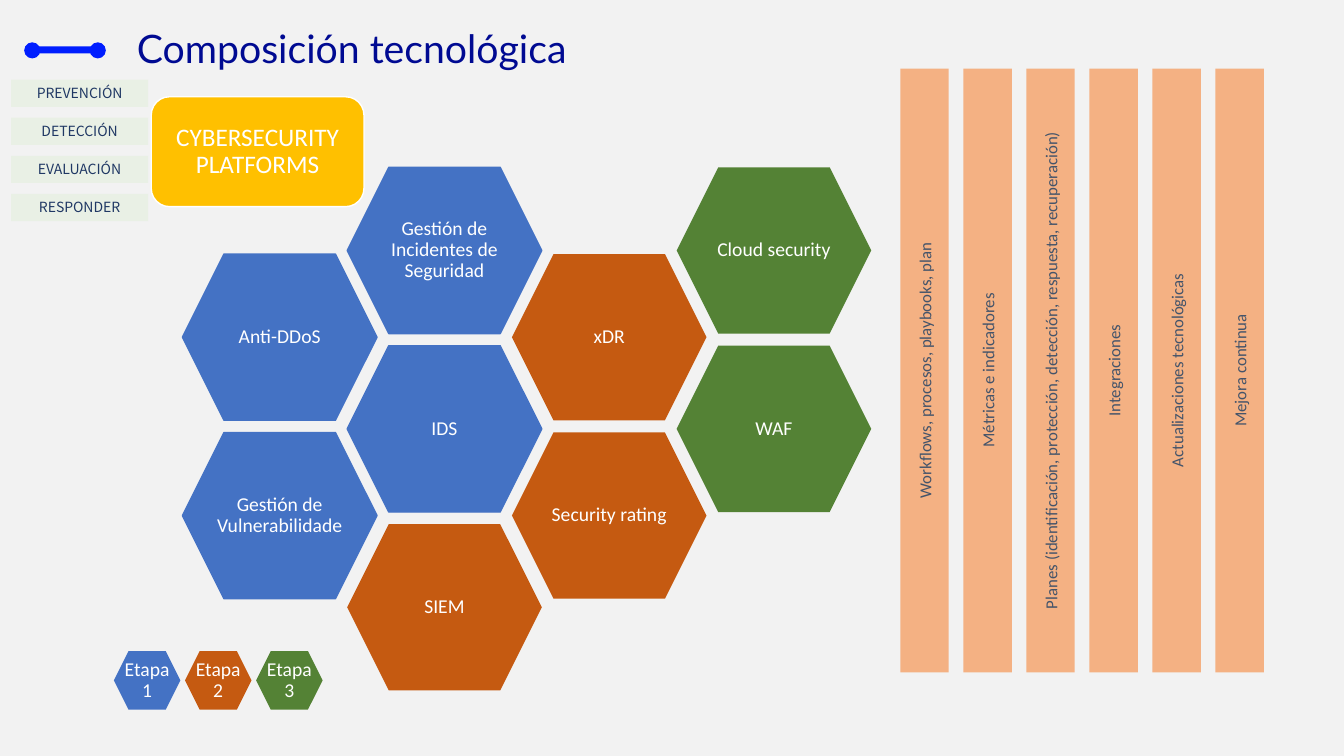
import pptx
import pptx.util
import pptx.dml.color
import pptx.enum.shapes
import pptx.enum.text
import pptx.oxml
import pptx.oxml.ns

Inches = pptx.util.Inches
SHAPES = pptx.enum.shapes.MSO_SHAPE
ALIGN = pptx.enum.text.PP_ALIGN
ANCHOR = pptx.enum.text.MSO_ANCHOR

TITLE = "Composición tecnológica"
PLATFORMS = "CYBERSECURITY PLATFORMS"
FUNCTIONS = ["PREVENCIÓN", "DETECCIÓN", "EVALUACIÓN", "RESPONDER"]
STAGES = ["Etapa 1", "Etapa 2", "Etapa 3"]
# Honeycomb cells: label, stage index, column, row
CELLS = [
    ("Anti-DDoS", 0, 0, 0),
    ("Gestión de Vulnerabilidade", 0, 0, 1),
    ("Gestión de Incidentes de Seguridad", 0, 1, 0),
    ("IDS", 0, 1, 1),
    ("SIEM", 1, 1, 2),
    ("xDR", 1, 2, 0),
    ("Security rating", 1, 2, 1),
    ("Cloud security", 2, 3, 0),
    ("WAF", 2, 3, 1),
]
PILLARS = [
    "Workflows, procesos, playbooks, plan",
    "Métricas e indicadores",
    "Planes (identificación, protección, detección, respuesta, recuperación)",
    "Integraciones",
    "Actualizaciones tecnológicas",
    "Mejora continua",
]


class Theme:
    background = "F2F2F2"
    accent = "001EFF"
    title = "000A92"
    platform = "FFC000"
    function = "E2F0D9"
    function_text = "203864"
    stages = ["4472C4", "C55A11", "548235"]
    pillar = "F4B183"
    pillar_text = "44546A"
    white = "FFFFFF"
    title_font, body_font, function_font = "Lato", "Calibri", "Noto Sans CJK JP"
    title_size, platform_size, cell_size, pillar_size, function_size = 28, 18, 14, 12, 10


def rgb(value):
    return pptx.dml.color.RGBColor.from_string(value)


def add_block(page, kind, left, top, width, height, fill, line=None):
    block = page.shapes.add_shape(
        kind, Inches(left), Inches(top), Inches(width), Inches(height))
    block.shadow.inherit = False
    block.fill.solid()
    block.fill.fore_color.rgb = rgb(fill)
    if line:
        block.line.color.rgb = rgb(line)
        block.line.width = pptx.util.Pt(1)
    else:
        block.line.fill.background()
    return block


def write(box, text, size, color, font=Theme.body_font, align=ALIGN.CENTER,
          anchor=ANCHOR.MIDDLE, spacing=None, insets=None):
    """Fill a box with one paragraph; insets are (horizontal, vertical) inches."""
    frame = box.text_frame
    frame.word_wrap = True
    frame.vertical_anchor = anchor
    if insets:
        frame.margin_left = frame.margin_right = Inches(insets[0])
        frame.margin_top = frame.margin_bottom = Inches(insets[1])
    para = frame.paragraphs[0]
    para.alignment = align
    if spacing:
        para.line_spacing = spacing
    span = para.add_run()
    span.text = text
    span.font.name = font
    span.font.size = pptx.util.Pt(size)
    span.font.color.rgb = rgb(color)


def add_hexagon(page, left, top, width, height, text, fill, line=None):
    hexagon = add_block(page, SHAPES.HEXAGON, left, top, width, height, fill, line)
    hexagon.adjustments[0] = 0.25
    write(hexagon, text, Theme.cell_size, Theme.white, spacing=0.9, insets=(0, 0.02))


def add_heading(page):
    for left in (0.24, 0.89):
        add_block(page, SHAPES.OVAL, left, 0.42, 0.16, 0.16, Theme.accent)
    add_block(page, SHAPES.RECTANGLE, 0.32, 0.46, 0.66, 0.07, Theme.accent)
    box = page.shapes.add_textbox(Inches(1.26), Inches(0.24), Inches(9.01), Inches(0.52))
    write(box, TITLE, Theme.title_size, Theme.title, Theme.title_font,
          ALIGN.LEFT, ANCHOR.BOTTOM, 0.9)


def add_functions(page):
    for index, label in enumerate(FUNCTIONS):
        tag = add_block(page, SHAPES.RECTANGLE, 0.11, 0.79 + index * 0.378,
                        1.36, 0.27, Theme.function)
        color = tag.element.spPr.find(pptx.oxml.ns.qn("a:solidFill"))[0]
        alpha = pptx.oxml.parse_xml(
            f'<a:alpha {pptx.oxml.ns.nsdecls("a")} val="51000"/>')
        color.append(alpha)
        write(tag, label, Theme.function_size, Theme.function_text,
              Theme.function_font, anchor=ANCHOR.TOP)
        tag.text_frame.auto_size = pptx.enum.text.MSO_AUTO_SIZE.SHAPE_TO_FIT_TEXT


def add_honeycomb(page):
    for label, stage, column, row in CELLS:
        first_top = 1.66 if column % 2 else 2.52
        fill = Theme.stages[stage]
        add_hexagon(page, 1.81 + column * 1.634, first_top + row * 1.77, 1.93, 1.65,
                    label, fill, fill if stage == 0 else None)


def add_legend(page):
    for index, (label, fill) in enumerate(zip(STAGES, Theme.stages)):
        add_hexagon(page, 1.13 + index * 0.705, 6.46, 0.66, 0.58, label, fill)


def add_pillars(page):
    for index, label in enumerate(PILLARS):
        pillar = add_block(page, SHAPES.RECTANGLE, 8.93 + index * 0.625, 0.68,
                           0.48, 5.99, Theme.pillar)
        write(pillar, label, Theme.pillar_size, Theme.pillar_text)
        pillar.element.txBody.bodyPr.set("vert", "vert270")


def main():
    deck = pptx.Presentation()
    deck.slide_width, deck.slide_height = Inches(13.33), Inches(7.5)
    page = deck.slides.add_slide(deck.slide_layouts[6])
    page.background.fill.solid()
    page.background.fill.fore_color.rgb = rgb(Theme.background)
    add_heading(page)
    platform = add_block(page, SHAPES.ROUNDED_RECTANGLE, 1.5, 0.96, 2.11, 1.09,
                         Theme.platform, Theme.white)
    write(platform, PLATFORMS, Theme.platform_size, Theme.white,
          spacing=0.9, insets=(0.05, 0.05))
    add_functions(page)
    add_honeycomb(page)
    add_legend(page)
    add_pillars(page)
    deck.save("out.pptx")


if __name__ == "__main__":
    main()
